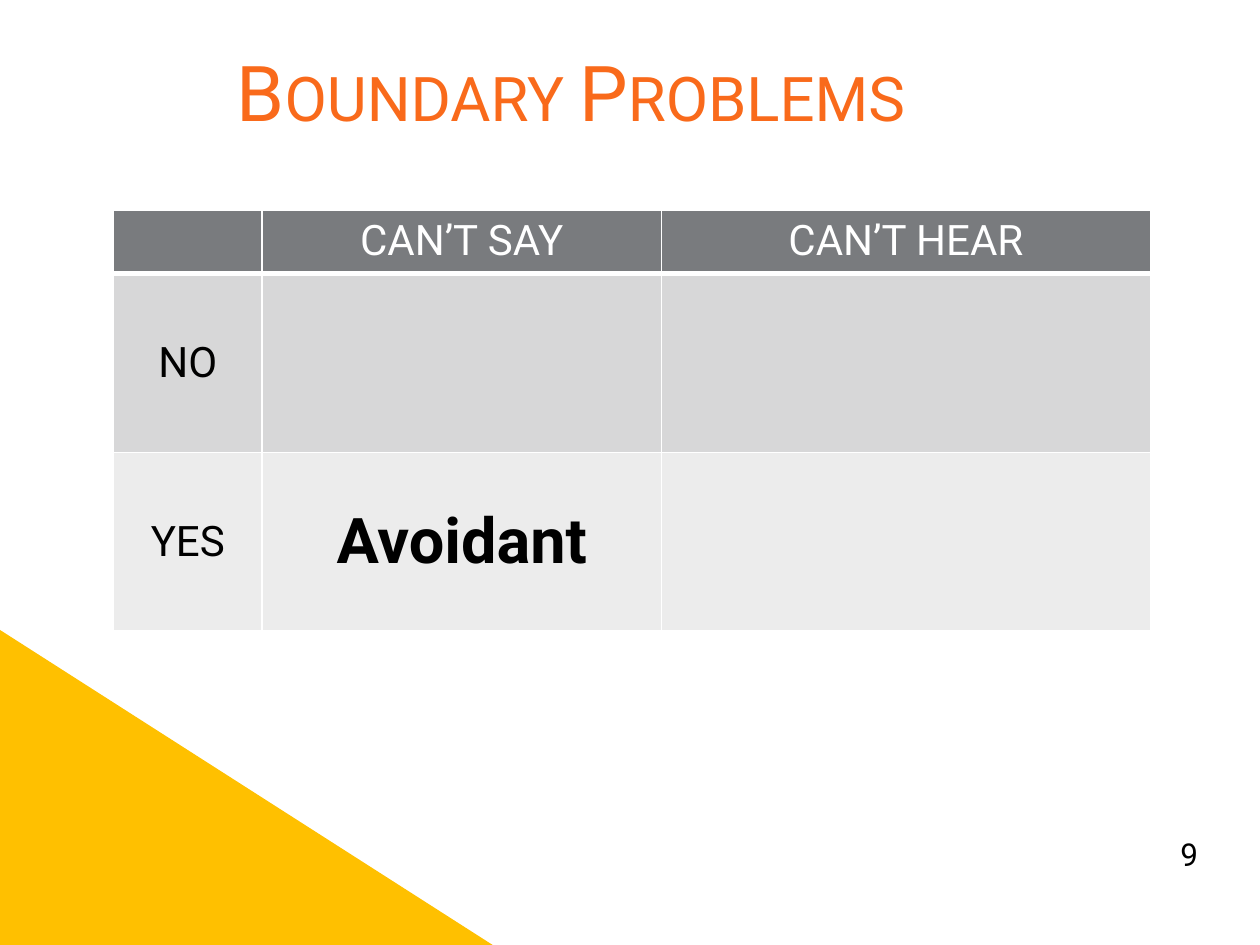
from lxml import etree
from pptx import Presentation
from pptx.dml.color import RGBColor
from pptx.enum import shapes, text
from pptx.oxml.ns import qn
from pptx.util import Inches, Pt

FONT = "Roboto"
COLS = [1.18, 3.17, 3.88]
ROWS = [0.5, 1.42, 1.42]
ROW_FILLS = ["797B7E", "D7D7D8", "ECECEC"]
CELLS = [
    ["", "CAN’T SAY", "CAN’T HEAR"],
    ["NO", "", ""],
    ["YES", "Avoidant", ""],
]


def rgb(value):
    return RGBColor.from_string(value)


def box(*lengths):
    return [Inches(v) for v in lengths]


def write(tf, words, size, color, align=text.PP_ALIGN.CENTER, bold=False):
    p = tf.paragraphs[0]
    p.text = words
    p.alignment = align
    font = p.font
    font.name, font.size, font.bold = FONT, Pt(size), bold
    font.color.rgb = rgb(color)
    return p


def add_shape(s, kind, at, fill=None):
    sp = s.shapes.add_shape(kind, *box(*at))
    sp.shadow.inherit = False
    sp.line.fill.background()
    if fill:
        sp.fill.solid()
        sp.fill.fore_color.rgb = rgb(fill)
    else:
        sp.fill.background()
    return sp


def set_title(s, words):
    title = s.shapes.title
    title.left, title.top, title.width, title.height = box(0.42, 0.42, 8.22, 0.6)
    tf = title.text_frame
    tf.word_wrap = True
    tf.vertical_anchor = text.MSO_ANCHOR.MIDDLE
    p = write(tf, words, 44, "F96A1B")
    p.runs[0].font._element.set("cap", "small")


def set_borders(cell, bottom):
    """White cell borders; they must come before the fill in the XML."""
    tc_pr = cell._tc.get_or_add_tcPr()
    for i, (side, width) in enumerate(zip("LRTB", (1, 1, 1, bottom))):
        ln = etree.Element(qn(f"a:ln{side}"), w=str(Pt(width)))
        fill = etree.SubElement(ln, qn("a:solidFill"))
        etree.SubElement(fill, qn("a:srgbClr"), val="FFFFFF")
        tc_pr.insert(i, ln)


def add_grid(s):
    frame = s.shapes.add_table(len(ROWS), len(COLS),
                               *box(0.9, 1.67, sum(COLS), sum(ROWS)))
    table = frame.table
    for column, width in zip(table.columns, COLS):
        column.width = Inches(width)
    for r, height in enumerate(ROWS):
        table.rows[r].height = Inches(height)
        for c, words in enumerate(CELLS[r]):
            cell = table.cell(r, c)
            cell.fill.solid()
            cell.fill.fore_color.rgb = rgb(ROW_FILLS[r])
            set_borders(cell, bottom=3 if r == 0 else 1)
            if r:
                cell.vertical_anchor = text.MSO_ANCHOR.MIDDLE
            if words:
                answer = r > 0 and c > 0
                write(cell.text_frame, words, 36 if answer else 24,
                      "000000" if r else "FFFFFF", bold=answer)


def main():
    prs = Presentation()
    prs.slide_width, prs.slide_height = box(10, 7.5)
    s = prs.slides.add_slide(prs.slide_layouts[5])

    # Corner decoration and page number
    add_shape(s, shapes.MSO_SHAPE.RIGHT_TRIANGLE, (0, 5, 3.91, 2.5), "FFC000")
    number = add_shape(s, shapes.MSO_SHAPE.OVAL, (9.19, 6.5, 0.55, 0.55))
    write(number.text_frame, "9", 18, "000000", text.PP_ALIGN.LEFT)

    # Title and table
    set_title(s, "Boundary Problems")
    add_grid(s)
    prs.save("out.pptx")


if __name__ == "__main__":
    main()
